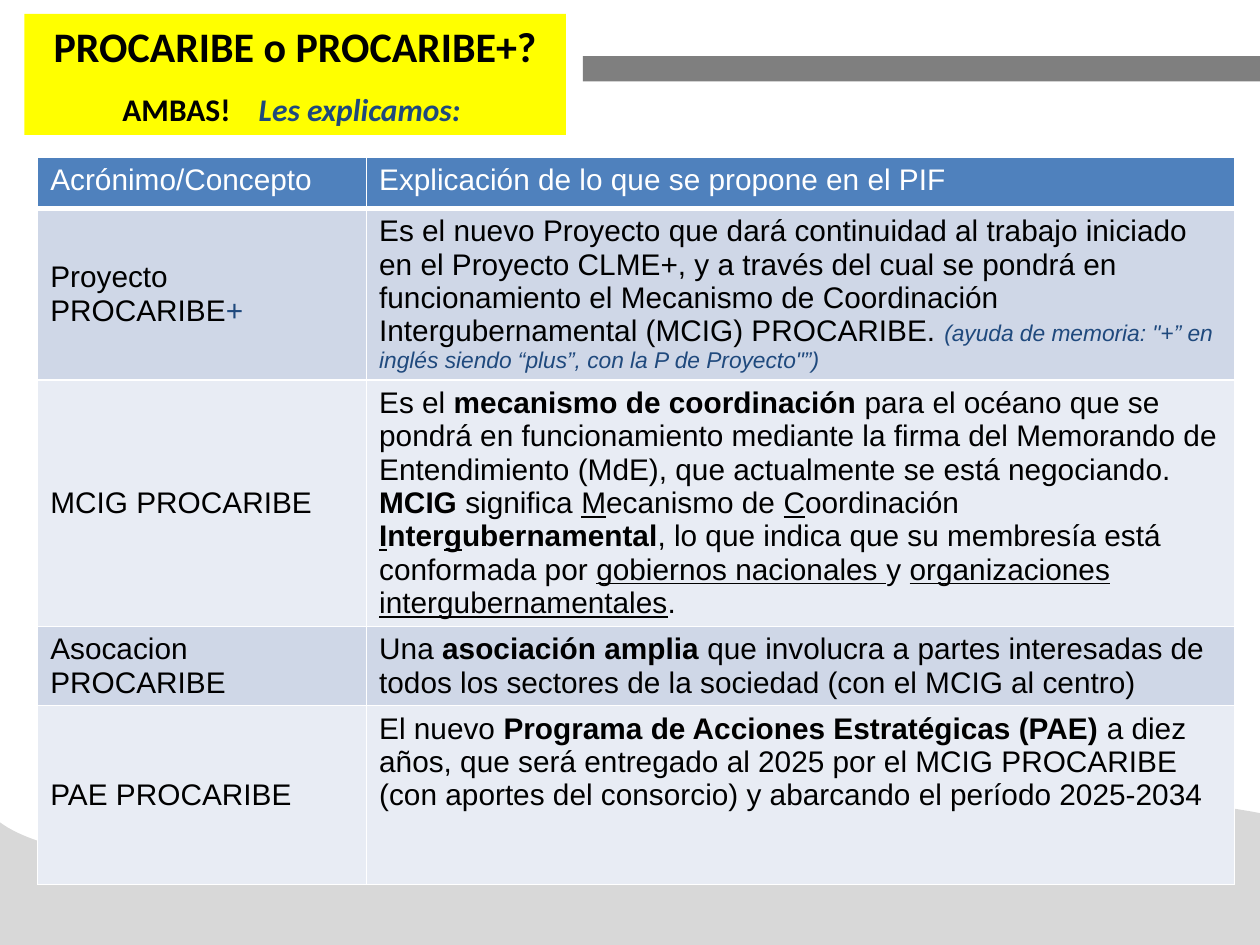
import lxml.etree
import pptx
import pptx.dml.color
import pptx.enum.shapes
import pptx.enum.text
import pptx.oxml.ns
import pptx.util

Cm = pptx.util.Cm
NAVY = "1F497D"
BOLD = {"bold": True}
LINE = {"underline": True}
BOLD_LINE = {"bold": True, "underline": True}
ROW_HEIGHTS = [1.03, 1.03, 1.03, 1.03, 3.6]
COLUMN_WIDTHS = [6.63, 17.5]

ROWS = [
    ([("Acrónimo/Concepto", {})],
     [("Explicación de lo que se propone en el PIF", {})]),
    ([("Proyecto PROCARIBE", {}), ("+", {"color": NAVY})],
     [("Es el nuevo Proyecto que dará continuidad al trabajo iniciado en el Proyecto CLME+, "
       "y a través del cual se pondrá en funcionamiento el Mecanismo de Coordinación "
       "Intergubernamental (MCIG) PROCARIBE. ", {}),
      ('(ayuda de memoria: "+” en inglés siendo “plus”, con la P de Proyecto"”)',
       {"size": 13, "color": NAVY, "italic": True})]),
    ([("MCIG PROCARIBE", {})],
     [("Es el ", {}), ("mecanismo de coordinación ", BOLD),
      ("para el océano que se pondrá en funcionamiento mediante la firma del Memorando de "
       "Entendimiento (MdE), que actualmente se está negociando. ", {}),
      ("MCIG", BOLD), (" significa ", {}), ("M", LINE), ("ecanismo de ", {}),
      ("C", LINE), ("oordinación ", {}), ("I", BOLD_LINE), ("nter", BOLD),
      ("g", BOLD_LINE), ("ubernamental", BOLD),
      (", lo que indica que su membresía está conformada por ", {}),
      ("gobiernos nacionales ", LINE), ("y ", {}),
      ("organizaciones intergubernamentales", LINE), (".", {})]),
    ([("Asocacion PROCARIBE", {})],
     [("Una ", {}), ("asociación amplia ", BOLD),
      ("que involucra a partes interesadas de todos los sectores de la sociedad "
       "(con el MCIG al centro)", {})]),
    ([("PAE PROCARIBE", {})],
     [("El nuevo ", {}), ("Programa de Acciones Estratégicas (PAE) ", BOLD),
      ("a diez años, que será entregado al 2025 por el MCIG PROCARIBE (con aportes del "
       "consorcio) y abarcando el período 2025-2034", {})]),
]


def rgb(value):
    return pptx.dml.color.RGBColor.from_string(value)


def paint(target, color):
    target.fill.solid()
    target.fill.fore_color.rgb = rgb(color)


def write(para, text, size=17, font="Arial", color="000000", bold=None,
          italic=None, underline=None, spacing=None):
    span = para.add_run()
    span.text = text
    span.font.size = pptx.util.Pt(size)
    span.font.name = font
    span.font.color.rgb = rgb(color)
    span.font.bold = bold
    span.font.italic = italic
    span.font.underline = underline
    if spacing:
        span.font._element.set("spc", str(spacing * 100))


def finish_shape(shape, color):
    paint(shape, color)
    shape.line.fill.background()
    shape.shadow.inherit = False


def add_bar(page):
    bar = page.shapes.add_shape(pptx.enum.shapes.MSO_SHAPE.RECTANGLE,
                                Cm(11.75), Cm(1.13), Cm(13.72), Cm(0.51))
    finish_shape(bar, "7F7F7F")


def curve_points(start, first, second, end, steps=30):
    for step in range(1, steps + 1):
        t = step / steps
        weights = ((1 - t) ** 3, 3 * t * (1 - t) ** 2, 3 * t * t * (1 - t), t ** 3)
        corners = (start, first, second, end)
        yield tuple(Cm(sum(w * corner[axis] for w, corner in zip(weights, corners)))
                    for axis in (0, 1))


def add_wave(page):
    right, middle, left = (25.5, 16.41), (9.6, 16.84), (-0.05, 16.54)
    builder = page.shapes.build_freeform(Cm(25.5), Cm(19.05))
    points = [(Cm(right[0]), Cm(right[1]))]
    points += curve_points(right, (22.28, 15.8), (17.25, 15.65), middle)
    points += curve_points(middle, (2.54, 17.96), (0.48, 16.97), left)
    points.append((Cm(-0.05), Cm(19.05)))
    builder.add_line_segments(points, close=True)
    finish_shape(builder.convert_to_shape(), "D8D8D8")


def add_borders(cell, bottom_width):
    properties = cell._tc.get_or_add_tcPr()
    name = pptx.oxml.ns.qn
    for side, width in (("L", 1), ("R", 1), ("T", 1), ("B", bottom_width)):
        border = lxml.etree.SubElement(properties, name(f"a:ln{side}"),
                                       w=str(pptx.util.Pt(width)))
        fill = lxml.etree.SubElement(border, name("a:solidFill"))
        lxml.etree.SubElement(fill, name("a:srgbClr"), val="FFFFFF")


def add_concept_table(page):
    table = page.shapes.add_table(len(ROWS), 2, Cm(0.76), Cm(3.17),
                                  Cm(sum(COLUMN_WIDTHS)), Cm(sum(ROW_HEIGHTS))).table
    for column, width in zip(table.columns, COLUMN_WIDTHS):
        column.width = Cm(width)
    anchors = pptx.enum.text.MSO_ANCHOR
    for index, (row, height, contents) in enumerate(zip(table.rows, ROW_HEIGHTS, ROWS)):
        row.height = Cm(height)
        header = index == 0
        fill = "4F81BD" if header else ("E8ECF4", "CFD7E7")[index % 2]
        for cell, spans in zip(row.cells, contents):
            add_borders(cell, 3 if header else 1)
            paint(cell, fill)
            cell.vertical_anchor = anchors.TOP if header else anchors.MIDDLE
            for text, style in spans:
                base = {"color": "FFFFFF" if header else "000000"}
                write(cell.text_frame.paragraphs[0], text, **(base | style))
    table.cell(len(ROWS) - 1, 1).vertical_anchor = anchors.TOP


def add_title(page):
    box = page.shapes.title
    box.left, box.top, box.width, box.height = Cm(0.49), Cm(0.28), Cm(10.92), Cm(2.44)
    paint(box, "FFFF00")
    frame = box.text_frame
    frame.word_wrap = True
    frame.auto_size = pptx.enum.text.MSO_AUTO_SIZE.NONE
    frame.vertical_anchor = pptx.enum.text.MSO_ANCHOR.TOP
    heading, subheading = frame.paragraphs[0], frame.add_paragraph()
    for para in (heading, subheading):
        para.alignment = pptx.enum.text.PP_ALIGN.CENTER
    subheading.space_before = pptx.util.Pt(11)
    style = {"font": "Calibri", "bold": True}
    write(heading, "PROCARIBE o PROCARIBE+?", size=24, **style)
    write(subheading, "AMBAS!", size=18, **style)
    write(subheading, " ", size=18, spacing=12, **style)
    write(subheading, "Les explicamos: ", size=18, color=NAVY, italic=True, **style)


def main():
    deck = pptx.Presentation()
    deck.slide_width, deck.slide_height = Cm(25.4), Cm(19.05)
    page = deck.slides.add_slide(deck.slide_layouts[5])
    add_bar(page)
    add_wave(page)
    add_concept_table(page)
    add_title(page)
    deck.save("out.pptx")


if __name__ == "__main__":
    main()
